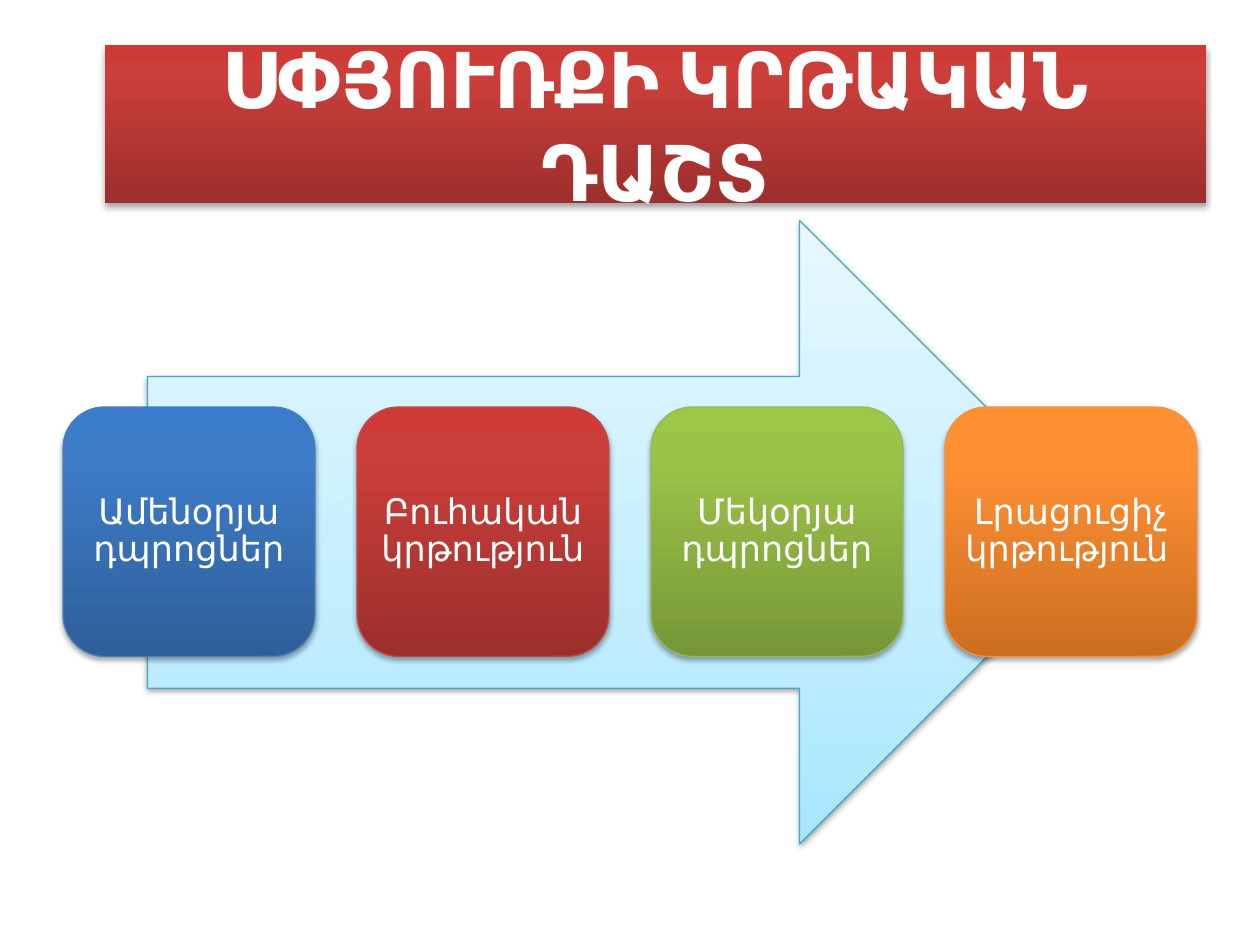
from dataclasses import dataclass

from lxml import etree
from pptx import Presentation
from pptx.dml.color import RGBColor
from pptx.enum import shapes, text
from pptx.oxml import ns
from pptx.util import Inches, Pt

FONT = "Calibri"
WHITE = "FFFFFF"
RED = ((0, "9C2F2D"), (80, "CB3E3A"), (100, "CE3B37"))
BLUE = ((0, "2F5F99"), (80, "3D7CC7"), (100, "3A7CCB"))
GREEN = ((0, "779737"), (80, "9BC348"), (100, "9DC746"))
ORANGE = ((0, "CC6E20"), (80, "FF9034"), (100, "FF9136"))
PALE_BLUE = ((0, "A7E6FF"), (35, "C1EDFF"), (100, "E7F8FF"))

CARD_LEFT, CARD_TOP = 0.5, 3.23
CARD_WIDTH, CARD_HEIGHT = 2, 1.98
CARD_PITCH = 7 / 3


@dataclass
class Card:
    label: str
    stops: tuple
    outline: str


CARDS = [
    Card("Ամենօրյա դպրոցներ", BLUE, "4B7EBC"),
    Card("Բուհական կրթություն", RED, "BF4C48"),
    Card("Մեկօրյա դպրոցներ", GREEN, "98B955"),
    Card("Լրացուցիչ կրթություն ", ORANGE, "F69240"),
]


def color(value: str) -> RGBColor:
    return RGBColor.from_string(value)


def add_color(parent, value: str):
    return etree.SubElement(parent, ns.qn("a:srgbClr"), val=value)


def fill_gradient(shape, stops: tuple) -> None:
    """Fill from bottom to top with (percent, colour) stops."""
    shape.fill.gradient()
    shape.fill.gradient_angle = 90
    stop_list = shape._element.spPr.find(".//" + ns.qn("a:gsLst"))
    for old_stop in list(stop_list):
        stop_list.remove(old_stop)
    for percent, value in stops:
        stop = etree.SubElement(stop_list, ns.qn("a:gs"), pos=str(percent * 1000))
        add_color(stop, value)


def add_shadow(shape, distance: float, opacity: int) -> None:
    """Cast a soft black shadow straight down."""
    shape.shadow.inherit = False
    effects = shape._element.spPr.find(ns.qn("a:effectLst"))
    shadow = etree.SubElement(
        effects, ns.qn("a:outerShdw"), blurRad=str(Pt(3.1)),
        dist=str(Pt(distance)), dir="5400000", rotWithShape="0")
    black = add_color(shadow, "000000")
    etree.SubElement(black, ns.qn("a:alpha"), val=str(opacity * 1000))


def outline(shape, value: str) -> None:
    shape.line.color.rgb = color(value)
    shape.line.width = Pt(0.75)


def write(shape, label: str, size: int, bold: bool = False):
    frame = shape.text_frame
    frame.text = label
    frame.word_wrap = True
    frame.auto_size = text.MSO_AUTO_SIZE.NONE
    frame.vertical_anchor = text.MSO_ANCHOR.MIDDLE
    paragraph = frame.paragraphs[0]
    paragraph.alignment = text.PP_ALIGN.CENTER
    font = paragraph.runs[0].font
    font.name, font.size, font.bold = FONT, Pt(size), bold
    font.color.rgb = color(WHITE)
    return frame


def format_title(title) -> None:
    title.left, title.top = Inches(0.83), Inches(0.36)
    title.width, title.height = Inches(8.74), Inches(1.25)
    fill_gradient(title, RED)
    add_shadow(title, 1.8, 35)
    write(title, "ՍՓՅՈՒՌՔԻ ԿՐԹԱԿԱՆ ԴԱՇՏ", 44, bold=True)


def add_arrow(slide) -> None:
    arrow = slide.shapes.add_shape(
        shapes.MSO_SHAPE.RIGHT_ARROW,
        Inches(1.17), Inches(1.75), Inches(7.65), Inches(4.95))
    fill_gradient(arrow, PALE_BLUE)
    outline(arrow, "46AAC5")
    add_shadow(arrow, 1.6, 38)


def add_card(slide, card: Card, left: float) -> None:
    shape = slide.shapes.add_shape(
        shapes.MSO_SHAPE.ROUNDED_RECTANGLE, Inches(left), Inches(CARD_TOP),
        Inches(CARD_WIDTH), Inches(CARD_HEIGHT))
    fill_gradient(shape, card.stops)
    outline(shape, card.outline)
    add_shadow(shape, 1.8, 35)
    frame = write(shape, card.label, 20)
    frame.margin_left = frame.margin_right = 0
    frame.paragraphs[0].line_spacing = 0.9


def main() -> None:
    presentation = Presentation()
    presentation.slide_width, presentation.slide_height = Inches(10), Inches(7.5)
    slide = presentation.slides.add_slide(presentation.slide_layouts[5])
    format_title(slide.shapes.title)
    add_arrow(slide)
    for index, card in enumerate(CARDS):
        add_card(slide, card, CARD_LEFT + index * CARD_PITCH)
    presentation.save("out.pptx")


if __name__ == "__main__":
    main()
